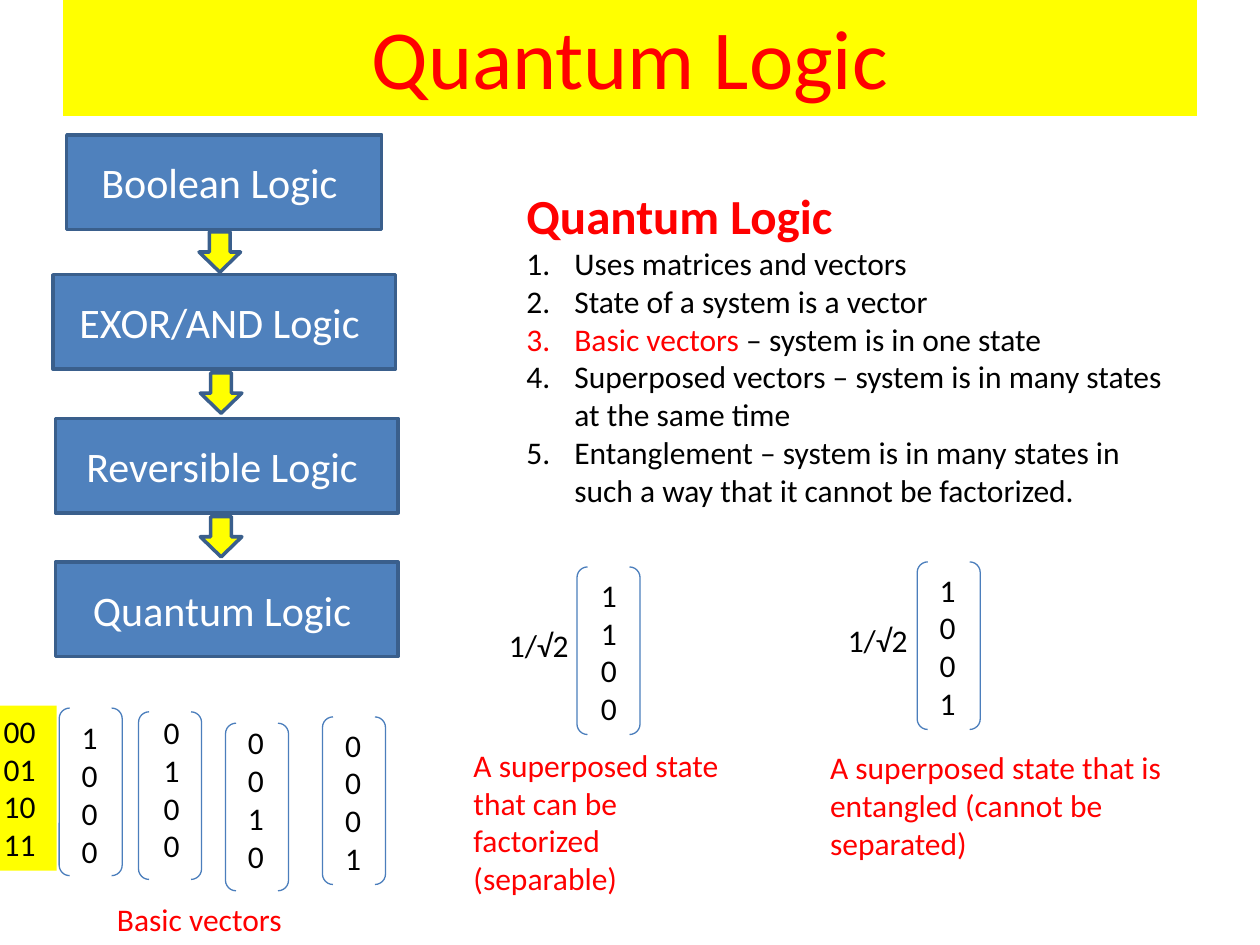
from pptx import Presentation
from pptx.dml.color import RGBColor
from pptx.enum.shapes import MSO_SHAPE
from pptx.enum.text import MSO_ANCHOR, MSO_AUTO_SIZE, PP_ALIGN
from pptx.oxml.xmlchemy import OxmlElement
from pptx.util import Pt

SCALE = 9144
RED, BLACK, YELLOW = "FF0000", "000000", "FFFF00"


def px(*nums):
    return [n * SCALE for n in nums]


def tint(code):
    return RGBColor.from_string(code)


class Deck:
    font = "Calibri"
    blue = "4F81BD"
    edge = "3A5F8C"
    thin = "4B7EBC"

    def __init__(self, wide, high):
        self.prs = Presentation()
        self.prs.slide_width, self.prs.slide_height = px(wide, high)
        self.slide = self.prs.slides.add_slide(self.prs.slide_layouts[5])

    def ink(self, run, size, color, bold=False):
        run.font.name = self.font
        run.font.size = Pt(size)
        run.font.bold = bold
        run.font.color.rgb = tint(color)

    def fill(self, shape, color):
        shape.fill.solid()
        shape.fill.fore_color.rgb = tint(color)

    def title(self, text, *box):
        shape = self.slide.shapes.title
        shape.left, shape.top, shape.width, shape.height = px(*box)
        self.fill(shape, YELLOW)
        frame = shape.text_frame
        frame.text = text
        frame.vertical_anchor = MSO_ANCHOR.MIDDLE
        frame.paragraphs[0].alignment = PP_ALIGN.CENTER
        self.ink(frame.paragraphs[0].runs[0], 48, RED)

    def shape(self, kind, box, color, line, width):
        shape = self.slide.shapes.add_shape(kind, *px(*box))
        shape.shadow.inherit = False
        if color:
            self.fill(shape, color)
        else:
            shape.fill.background()
        shape.line.color.rgb = tint(line)
        shape.line.width = Pt(width)
        return shape

    def block(self, text, *box):
        shape = self.shape(MSO_SHAPE.RECTANGLE, box, self.blue, self.edge, 2)
        frame = shape.text_frame
        frame.text = text
        frame.vertical_anchor = MSO_ANCHOR.MIDDLE
        frame.paragraphs[0].alignment = PP_ALIGN.CENTER
        self.ink(frame.paragraphs[0].runs[0], 24, "FFFFFF")

    def arrow(self, left, top):
        self.shape(MSO_SHAPE.DOWN_ARROW, (left, top, 33, 32), YELLOW, self.edge, 2)

    def text(self, text, *box, color=BLACK, back=None, wrap=True):
        shape = self.slide.shapes.add_textbox(*px(*box))
        if back:
            self.fill(shape, back)
        frame = shape.text_frame
        frame.word_wrap = wrap
        frame.auto_size = MSO_AUTO_SIZE.SHAPE_TO_FIT_TEXT
        frame.text = text
        for para in frame.paragraphs:
            for run in para.runs:
                self.ink(run, 18, color)
        return frame

    def vector(self, digits, left, top, inner, start):
        box = left, top, 50, 133
        self.shape(MSO_SHAPE.DOUBLE_BRACKET, box, None, self.thin, 0.75)
        self.text(digits, inner, start, 33, 131)

    def number(self, para):
        props = para._p.get_or_add_pPr()
        left = px(38)[0]
        props.set("marL", str(left))
        props.set("indent", str(-left))
        mark = OxmlElement("a:buAutoNum")
        mark.set("type", "arabicPeriod")
        props.append(mark)

    def points(self, head, items, *box):
        frame = self.text(head, *box)
        self.ink(frame.paragraphs[0].runs[0], 28, RED, True)
        for item in items:
            para = frame.add_paragraph()
            self.number(para)
            for text, color in item:
                run = para.add_run()
                run.text = text
                self.ink(run, 18, color)


def main():
    deck = Deck(1000, 750)
    deck.title("Quantum Logic", 50, -3, 900, 95)

    blocks = [
        ("Boolean Logic ", 53, 107, 250),
        ("EXOR/AND Logic ", 42, 218, 272),
        ("Reversible Logic ", 44, 332, 272),
        ("Quantum Logic ", 44, 446, 272),
    ]
    for text, left, top, wide in blocks:
        deck.block(text, left, top, wide, 75)
    for left, top in [(158, 184), (159, 296), (159, 410)]:
        deck.arrow(left, top)

    deck.points("Quantum Logic", [
        [("Uses matrices and vectors", BLACK)],
        [("State of a system is a vector", BLACK)],
        [("Basic vectors ", RED), ("– system is in one state", BLACK)],
        [("Superposed vectors – system is in many states at the same time", BLACK)],
        [("Entanglement – system is in many states in such a way "
          "that it cannot be factorized.", BLACK)],
    ], 408, 142, 542, 269)

    vectors = [
        ("1 0 0 0", 47, 562, 55, 565),
        ("0 1 0 0", 110, 565, 120, 561),
        ("0 0 1 0", 179, 574, 187, 569),
        ("0 0 0 1", 256, 569, 264, 571),
        ("1 1 0 0", 458, 450, 467, 452),
        ("1 0 0 1", 728, 446, 736, 448),
    ]
    for vector in vectors:
        deck.vector(*vector)
    for left, top in [(394, 492), (663, 488)]:
        deck.text("1/√2", left, top, 75, 40)

    deck.text("00\n01\n10\n11", -7, 560, 52, 131, back=YELLOW)
    deck.text("Basic vectors", 83, 709, 158, 40, color=RED, wrap=False)
    deck.text("A superposed state that can be factorized\n(separable)",
              366, 587, 234, 131, color=RED)
    deck.text("A superposed state that is entangled (cannot be separated)",
              649, 589, 326, 101, color=RED)
    deck.prs.save("out.pptx")


if __name__ == "__main__":
    main()
